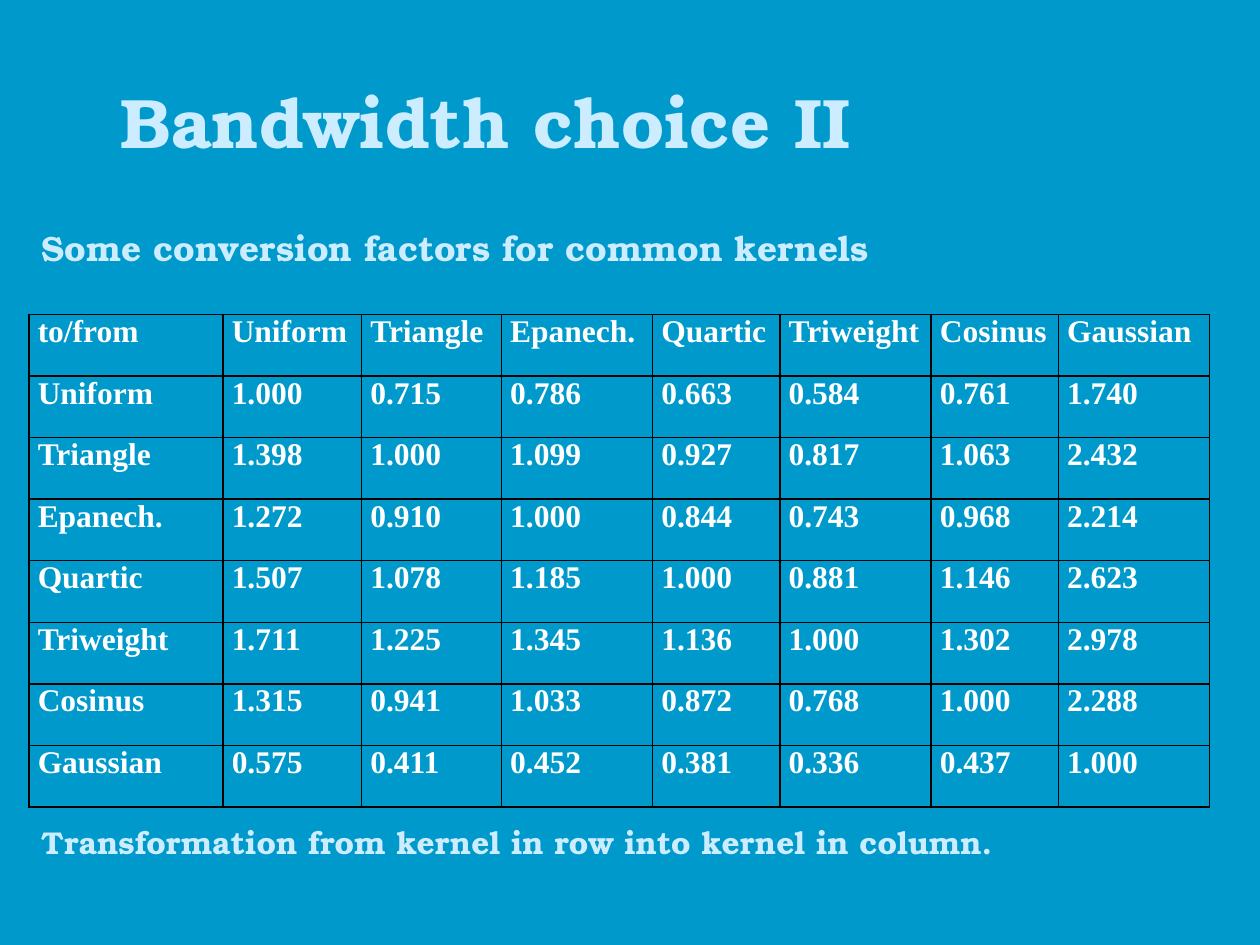
from dataclasses import dataclass
from lxml.etree import SubElement as Sub
from pptx import Presentation as Deck
from pptx.dml.color import RGBColor as Color
from pptx.enum.text import MSO_ANCHOR as Anchor, PP_ALIGN as Align
from pptx.oxml.ns import qn
from pptx.util import Inches, Pt


@dataclass
class Theme:
    back: str = "0099CC"
    pale: str = "CCECFF"
    white: str = "FFFFFF"
    line: str = "000000"
    serif: str = "TeX Gyre Bonum"
    roman: str = "Times New Roman"
    large: int = 40
    mid: int = 20
    small: int = 18
    rule: int = 1


look = Theme()
texts = [
    ("Bandwidth choice II", look.large, (0.086, 0.063, 0.842, 0.13), Align.LEFT, Anchor.MIDDLE),
    ("Some conversion factors for common kernels", look.mid, (0.023, 0.233, 0.867, 0.06), Align.JUSTIFY, Anchor.TOP),
    ("Transformation from kernel in row into kernel in column.", look.small, (0.023, 0.864, 0.914, 0.05), Align.JUSTIFY, Anchor.TOP),
]
kernels = ["Uniform", "Triangle", "Epanech.", "Quartic", "Triweight", "Cosinus", "Gaussian"]
factors = [
    ("1.000", "0.715", "0.786", "0.663", "0.584", "0.761", "1.740"),
    ("1.398", "1.000", "1.099", "0.927", "0.817", "1.063", "2.432"),
    ("1.272", "0.910", "1.000", "0.844", "0.743", "0.968", "2.214"),
    ("1.507", "1.078", "1.185", "1.000", "0.881", "1.146", "2.623"),
    ("1.711", "1.225", "1.345", "1.136", "1.000", "1.302", "2.978"),
    ("1.315", "0.941", "1.033", "0.872", "0.768", "1.000", "2.288"),
    ("0.575", "0.411", "0.452", "0.381", "0.336", "0.437", "1.000"),
]
rows = [("to/from", *kernels)] + [(name, *line) for name, line in zip(kernels, factors)]
shares = [1.54, 1.1, 1.11, 1.2, 1.01, 1.2, 1.01, 1.2]
area = (0.023, 0.333, 0.937, 0.521)

deck = Deck()
deck.slide_width, deck.slide_height = Inches(10), Inches(7.5)
slide = deck.slides.add_slide(deck.slide_layouts[6])
slide.background.fill.solid()
slide.background.fill.fore_color.rgb = Color.from_string(look.back)


def place(box):
    sides = (deck.slide_width, deck.slide_height) * 2
    return [round(part * side) for part, side in zip(box, sides)]


def write(frame, text, face, size, tint, align):
    para = frame.paragraphs[0]
    para.alignment = align
    run = para.add_run()
    run.text = text
    font = run.font
    font.name, font.size, font.bold = face, Pt(size), True
    font.color.rgb = Color.from_string(tint)


def border(cell):
    props = cell._tc.get_or_add_tcPr()
    for spot, side in enumerate(("lnL", "lnR", "lnT", "lnB")):
        edge = Sub(props, qn(f"a:{side}"), w=str(Pt(look.rule)))
        Sub(Sub(edge, qn("a:solidFill")), qn("a:srgbClr"), val=look.line)
        props.insert(spot, edge)


for text, size, box, align, anchor in texts:
    frame = slide.shapes.add_textbox(*place(box)).text_frame
    frame.word_wrap = True
    frame.vertical_anchor = anchor
    write(frame, text, look.serif, size, look.pale, align)

spot = place(area)
grid = slide.shapes.add_table(len(rows), len(shares), *spot).table
grid.first_row = grid.horz_banding = False
for col, share in zip(grid.columns, shares):
    col.width = round(spot[2] * share / sum(shares))
for row, line in zip(grid.rows, rows):
    row.height = round(spot[3] / len(rows))
    for cell, text in zip(row.cells, line):
        cell.margin_left = cell.margin_right = Inches(0.07)
        cell.margin_top = cell.margin_bottom = 0
        cell.fill.background()
        border(cell)
        write(cell.text_frame, text, look.roman, look.small, look.white, Align.JUSTIFY)

deck.save("out.pptx")
